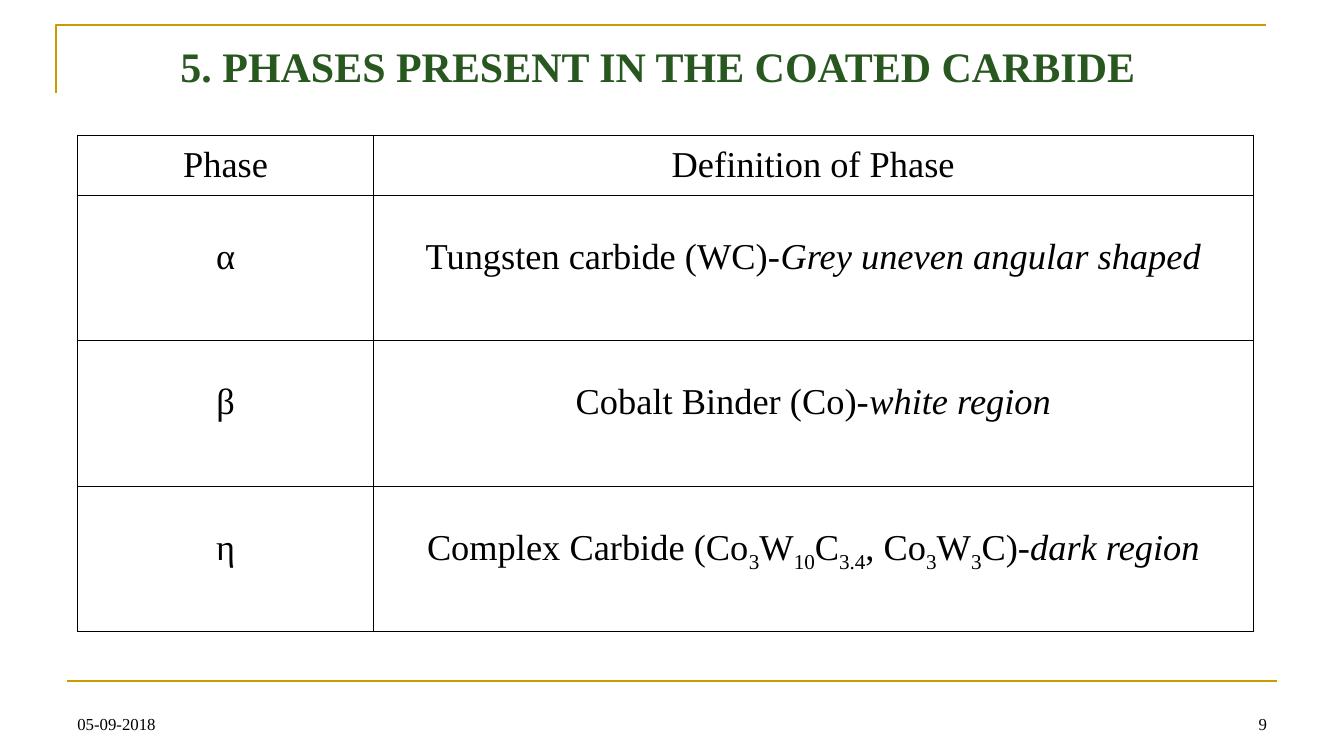
import lxml.etree
import pptx
import pptx.dml.color
import pptx.enum.shapes
import pptx.enum.text
import pptx.oxml.ns
import pptx.util

Cm = pptx.util.Cm
Pt = pptx.util.Pt
Align = pptx.enum.text.PP_ALIGN
Anchor = pptx.enum.text.MSO_ANCHOR

GOLD = pptx.dml.color.RGBColor(0xCC, 0x99, 0x00)
GREEN = pptx.dml.color.RGBColor(0x28, 0x57, 0x20)
BLACK = pptx.dml.color.RGBColor(0x00, 0x00, 0x00)
FONT = "Times New Roman"

# In each definition, "_" marks a subscript and "/" marks italics
PHASES = [
    ("α", [("Tungsten carbide (WC)-", ""), ("Grey uneven angular shaped", "/")]),
    ("β", [("Cobalt Binder (Co)-", ""), ("white region", "/")]),
    ("η", [("Complex Carbide (Co", ""), ("3", "_"), ("W", ""), ("10", "_"),
           ("C", ""), ("3.4", "_"), (", Co", ""), ("3", "_"), ("W", ""),
           ("3", "_"), ("C)-", ""), ("dark region", "/")]),
]


def format_run(run, size, color=BLACK, bold=False):
    run.font.name = FONT
    run.font.size = Pt(size)
    run.font.color.rgb = color
    run.font.bold = bold


def add_frame(slide, left, top, width, corner_height, rule_top):
    """Gold corner above the title and gold rule above the footer."""
    builder = slide.shapes.build_freeform(left, top + corner_height)
    builder.add_line_segments([(left, top), (left + width, top)], close=False)
    corner = builder.convert_to_shape()
    corner.fill.background()
    corner.shadow.inherit = False

    rule_left = left + Cm(0.28)
    rule = slide.shapes.add_connector(
        pptx.enum.shapes.MSO_CONNECTOR.STRAIGHT,
        rule_left, rule_top, rule_left + width, rule_top)
    lxml.etree.SubElement(rule._element.spPr, pptx.oxml.ns.qn("a:effectLst"))
    for stroke in (corner, rule):
        stroke.line.color.rgb = GOLD
        stroke.line.width = Pt(1.5)


def add_title(slide, left, top, width, height):
    title = slide.shapes.title
    title.left, title.top, title.width, title.height = left, top, width, height
    frame = title.text_frame
    frame.text = "5. PHASES PRESENT IN THE COATED CARBIDE"
    frame.auto_size = pptx.enum.text.MSO_AUTO_SIZE.NONE
    frame.vertical_anchor = Anchor.TOP
    frame.paragraphs[0].alignment = Align.CENTER
    format_run(frame.paragraphs[0].runs[0], 30, GREEN, bold=True)


def border_cell(cell):
    properties = cell._tc.get_or_add_tcPr()
    for side in ("a:lnL", "a:lnR", "a:lnT", "a:lnB"):
        edge = lxml.etree.SubElement(
            properties, pptx.oxml.ns.qn(side), w=str(Pt(1)))
        fill = lxml.etree.SubElement(edge, pptx.oxml.ns.qn("a:solidFill"))
        lxml.etree.SubElement(
            fill, pptx.oxml.ns.qn("a:srgbClr"), val=str(BLACK))


def fill_cell(cell, pieces, margin_top, anchor):
    border_cell(cell)
    cell.fill.background()
    cell.margin_left = cell.margin_right = Cm(0.18)
    cell.margin_top, cell.margin_bottom = margin_top, 0
    cell.vertical_anchor = anchor
    paragraph = cell.text_frame.paragraphs[0]
    paragraph.alignment = Align.CENTER
    for text, mark in pieces:
        run = paragraph.add_run()
        run.text = text
        format_run(run, 26)
        run.font.italic = mark == "/"
        if mark == "_":
            run._r.get_or_add_rPr().set("baseline", "-25000")


def add_phase_table(slide, left, top, width, height):
    header_height, phase_width = Cm(1.52), Cm(7.45)
    table_frame = slide.shapes.add_table(
        len(PHASES) + 1, 2, left, top, width, height)
    table = table_frame.table
    table.first_row = table.horz_banding = False
    table.columns[0].width = phase_width
    table.columns[1].width = width - phase_width
    table.rows[0].height = header_height

    # Header row
    for column, heading in enumerate(("Phase", "Definition of Phase")):
        fill_cell(table.cell(0, column), [(heading, "")], 0, Anchor.MIDDLE)

    # One row per phase, its text one line below the top edge
    for row, (symbol, definition) in enumerate(PHASES, start=1):
        table.rows[row].height = (height - header_height) // len(PHASES)
        for column, pieces in enumerate(([(symbol, "")], definition)):
            fill_cell(table.cell(row, column), pieces, Cm(1.05), Anchor.TOP)


def add_footer(slide, left, top, width, height):
    """Date at the left end of the footer, slide number at the right."""
    item_width = Cm(7.9)
    for text, item_left, alignment in (
            ("05-09-2018", left, Align.LEFT),
            ("9", left + width - item_width, Align.RIGHT)):
        item = slide.shapes.add_textbox(item_left, top, item_width, height)
        frame = item.text_frame
        frame.text = text
        frame.word_wrap = True
        frame.vertical_anchor = Anchor.BOTTOM
        frame.paragraphs[0].alignment = alignment
        format_run(frame.paragraphs[0].runs[0], 12)


def main():
    presentation = pptx.Presentation()
    presentation.slide_width = Cm(33.87)
    presentation.slide_height = Cm(19.05)
    slide = presentation.slides.add_slide(presentation.slide_layouts[5])

    add_frame(slide, Cm(1.42), Cm(0.64), Cm(30.48), Cm(1.7), Cm(17.15))
    add_phase_table(slide, Cm(1.96), Cm(3.41), Cm(29.63), Cm(12.5))
    add_title(slide, Cm(1.96), Cm(0.89), Cm(29.26), Cm(1.55))
    add_footer(slide, Cm(1.7), Cm(17.35), Cm(30.48), Cm(1.27))
    presentation.save("out.pptx")


if __name__ == "__main__":
    main()
